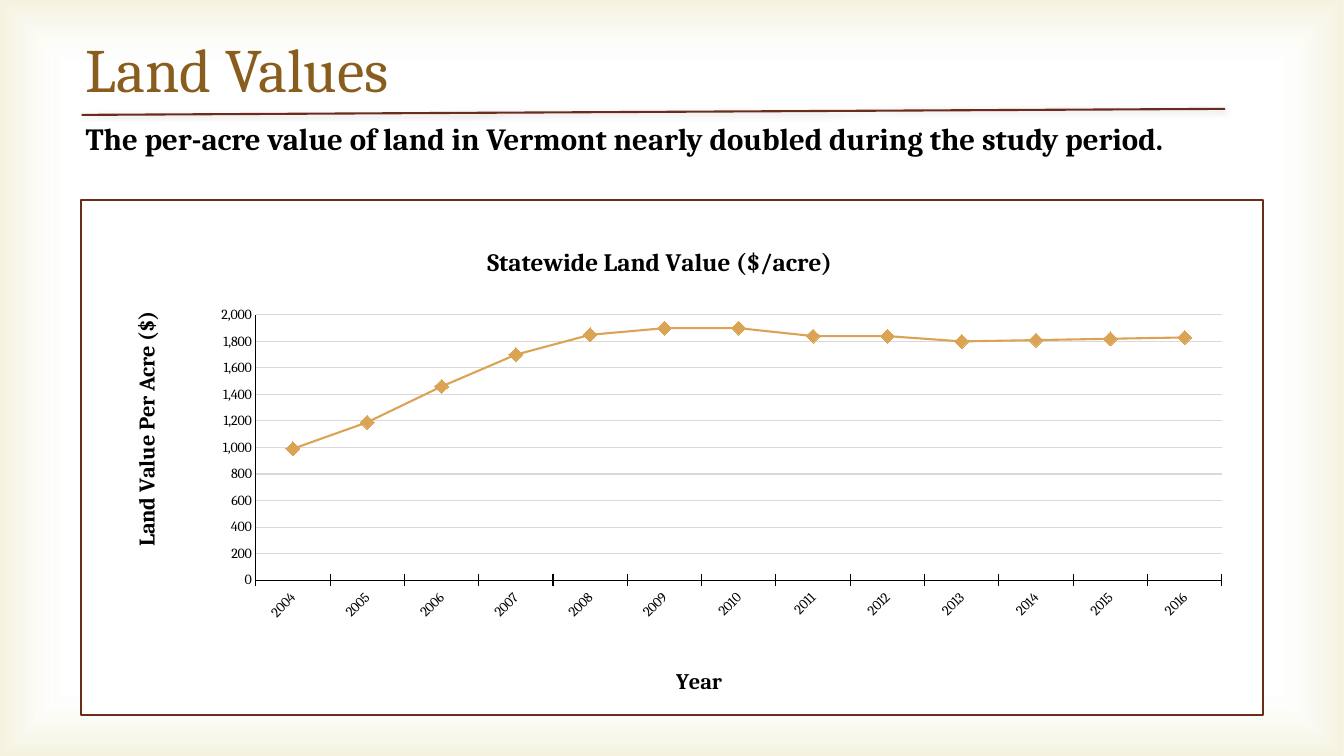
from dataclasses import dataclass

from lxml.etree import _Element as Element
from pptx import Presentation
from pptx.chart.axis import AxisTitle
from pptx.chart.chart import Chart, ChartTitle
from pptx.chart.data import CategoryChartData
from pptx.dml.color import RGBColor
from pptx.enum.chart import XL_CHART_TYPE, XL_MARKER_STYLE, XL_TICK_MARK
from pptx.enum.shapes import MSO_CONNECTOR, MSO_SHAPE
from pptx.enum.text import MSO_ANCHOR, MSO_AUTO_SIZE, PP_ALIGN
from pptx.oxml import parse_xml
from pptx.oxml.ns import nsdecls, qn
from pptx.slide import Slide
from pptx.text.text import TextFrame
from pptx.util import Inches, Pt

FONT = "Cambria"
COLORS = {
    "white": "FFFFFF",
    "glow": "D1CA75",
    "heading": "895D1D",
    "text": "000000",
    "rule": "6B2B1D",
    "grid": "D9D9D9",
    "series": "DBA455",
}
WIDTH, HEIGHT = 13.33, 7.5
LEFT = 0.75
YEARS = range(2004, 2017)
LAND_VALUES = (990, 1190, 1460, 1700, 1850, 1900, 1900,
               1840, 1840, 1800, 1810, 1820, 1830)


@dataclass(frozen=True)
class ChartLabel:
    """A chart or axis title; left and top are shares of the chart's size."""
    text: str
    size: int
    left: float
    top: float
    rotation: int = 0


CHART_TITLE = ChartLabel("Statewide Land Value ($/acre)", 18, 0.34, 0.08)
YEAR_TITLE = ChartLabel("Year", 16, 0.5, 0.9)
VALUE_TITLE = ChartLabel("Land Value Per Acre ($)", 16, 0.04, 0.21, -90)


def color(name: str) -> RGBColor:
    return RGBColor.from_string(COLORS[name])


def write(frame: TextFrame, text: str, size: int, name: str, bold: bool = False) -> None:
    para = frame.paragraphs[0]
    para.alignment = PP_ALIGN.LEFT
    span = para.add_run()
    span.text = text
    span.font.name = FONT
    span.font.size = Pt(size)
    span.font.bold = bold
    span.font.color.rgb = color(name)


def set_layout(parent: Element, index: int, **values: float | str) -> None:
    """Give a chart part a manual layout as its child at index."""
    for old in parent.findall(qn("c:layout")):
        parent.remove(old)
    entries = "".join(f'<c:{key} val="{value}"/>' for key, value in values.items())
    parent.insert(index, parse_xml(
        f'<c:layout {nsdecls("c")}><c:manualLayout>{entries}'
        "</c:manualLayout></c:layout>"))


def add_backdrop(page: Slide) -> None:
    box = page.shapes.add_shape(
        MSO_SHAPE.RECTANGLE, 0, 0, Inches(WIDTH), Inches(HEIGHT))
    box.shadow.inherit = False
    box.line.fill.background()
    stops = "".join(
        f'<a:gs pos="{share * 1000}"><a:srgbClr val="{COLORS[name]}">'
        f'<a:alpha val="{alpha * 1000}"/></a:srgbClr></a:gs>'
        for share, name, alpha in ((83, "white", 11), (100, "glow", 23)))
    gradient = parse_xml(
        f'<a:gradFill {nsdecls("a")} rotWithShape="1"><a:gsLst>{stops}</a:gsLst>'
        '<a:path path="rect"><a:fillToRect l="50000" t="50000" r="50000" b="50000"/>'
        "</a:path></a:gradFill>")
    box.element.spPr.find(qn("a:prstGeom")).addnext(gradient)
    page.shapes.title.element.addprevious(box.element)


def add_heading(page: Slide) -> None:
    title = page.shapes.title
    title.left, title.top = Inches(LEFT), Inches(0.1)
    title.width, title.height = Inches(10.86), Inches(1.15)
    title.text_frame.vertical_anchor = MSO_ANCHOR.MIDDLE
    write(title.text_frame, "Land Values", 44, "heading")

    box = page.shapes.add_textbox(
        Inches(LEFT), Inches(1.14), Inches(11.92), Inches(0.47))
    box.text_frame.word_wrap = True
    box.text_frame.auto_size = MSO_AUTO_SIZE.SHAPE_TO_FIT_TEXT
    write(box.text_frame,
          "The per-acre value of land in Vermont nearly doubled during the study period.",
          22, "text", bold=True)

    rule = page.shapes.add_connector(
        MSO_CONNECTOR.STRAIGHT, Inches(0.81), Inches(1.14), Inches(12.15), Inches(1.08))
    rule.line.color.rgb = color("rule")
    rule.line.width = Pt(1.5)
    rule.element.spPr.append(parse_xml(
        f'<a:effectLst {nsdecls("a")}><a:outerShdw blurRad="{Pt(3)}" dist="{Pt(1)}" '
        f'dir="5400000"><a:srgbClr val="{COLORS["text"]}"><a:alpha val="15000"/>'
        "</a:srgbClr></a:outerShdw></a:effectLst>"))


def label(owner: ChartTitle | AxisTitle, details: ChartLabel) -> None:
    """Write and place the title of a chart or an axis."""
    write(owner.text_frame, details.text, details.size, "text", bold=True)
    body = owner.element.find(".//" + qn("a:bodyPr"))
    body.set("rot", str(details.rotation * 60000))
    body.set("vert", "horz")
    set_layout(owner.element, 1, xMode="edge", yMode="edge",
               x=details.left, y=details.top)


def format_axes(chart: Chart) -> None:
    years, values = chart.category_axis, chart.value_axis
    for axis, details, tick in ((years, YEAR_TITLE, XL_TICK_MARK.CROSS),
                                (values, VALUE_TITLE, XL_TICK_MARK.NONE)):
        label(axis.axis_title, details)
        axis.major_tick_mark = tick
        axis.minor_tick_mark = XL_TICK_MARK.NONE
        axis.format.line.color.rgb = color("text")
        axis.format.line.width = Pt(0.75)
        axis.tick_labels.font.size = Pt(10)
    years.has_major_gridlines = False
    year_labels = "/".join(map(qn, ("c:catAx", "c:txPr", "a:bodyPr")))
    chart.element.find(".//" + year_labels).set("rot", str(-45 * 60000))

    values.minimum_scale, values.maximum_scale, values.major_unit = 0, 2000, 200
    values.tick_labels.number_format = "#,##0"
    values.tick_labels.number_format_is_linked = False
    values.has_major_gridlines = True
    values.major_gridlines.format.line.color.rgb = color("grid")
    values.major_gridlines.format.line.width = Pt(0.75)


def add_land_chart(page: Slide) -> None:
    data = CategoryChartData()
    data.categories = [str(year) for year in YEARS]
    data.add_series("Series 1", LAND_VALUES)
    chart = page.shapes.add_chart(
        XL_CHART_TYPE.LINE_MARKERS, Inches(0.79), Inches(1.97),
        Inches(11.75), Inches(5.13), data).chart
    chart.has_legend = False
    chart.font.name = FONT
    chart.font.size = Pt(10)
    chart.font.color.rgb = color("text")
    chart.has_title = True
    label(chart.chart_title, CHART_TITLE)
    format_axes(chart)

    plot = chart.plots[0]
    plot.vary_by_categories = False
    series = plot.series[0]
    series.smooth = False
    series.format.line.color.rgb = color("series")
    series.format.line.width = Pt(1.5)
    series.marker.style = XL_MARKER_STYLE.DIAMOND
    series.marker.size = 10
    series.marker.format.fill.solid()
    series.marker.format.fill.fore_color.rgb = color("series")
    series.marker.format.line.color.rgb = color("series")

    set_layout(chart.element.find(".//" + qn("c:plotArea")), 0,
               layoutTarget="inner", xMode="edge", yMode="edge",
               x=0.148, y=0.224, w=0.817, h=0.515)
    chart.element.find(qn("c:txPr")).addprevious(parse_xml(
        f'<c:spPr {nsdecls("c", "a")}><a:solidFill><a:srgbClr val="{COLORS["white"]}"/>'
        f'</a:solidFill><a:ln w="{Pt(1.5)}"><a:solidFill>'
        f'<a:srgbClr val="{COLORS["rule"]}"/></a:solidFill></a:ln></c:spPr>'))


def main() -> None:
    deck = Presentation()
    deck.slide_width, deck.slide_height = Inches(WIDTH), Inches(HEIGHT)
    page = deck.slides.add_slide(deck.slide_layouts[5])
    add_backdrop(page)
    add_heading(page)
    add_land_chart(page)
    deck.save("out.pptx")


if __name__ == "__main__":
    main()
